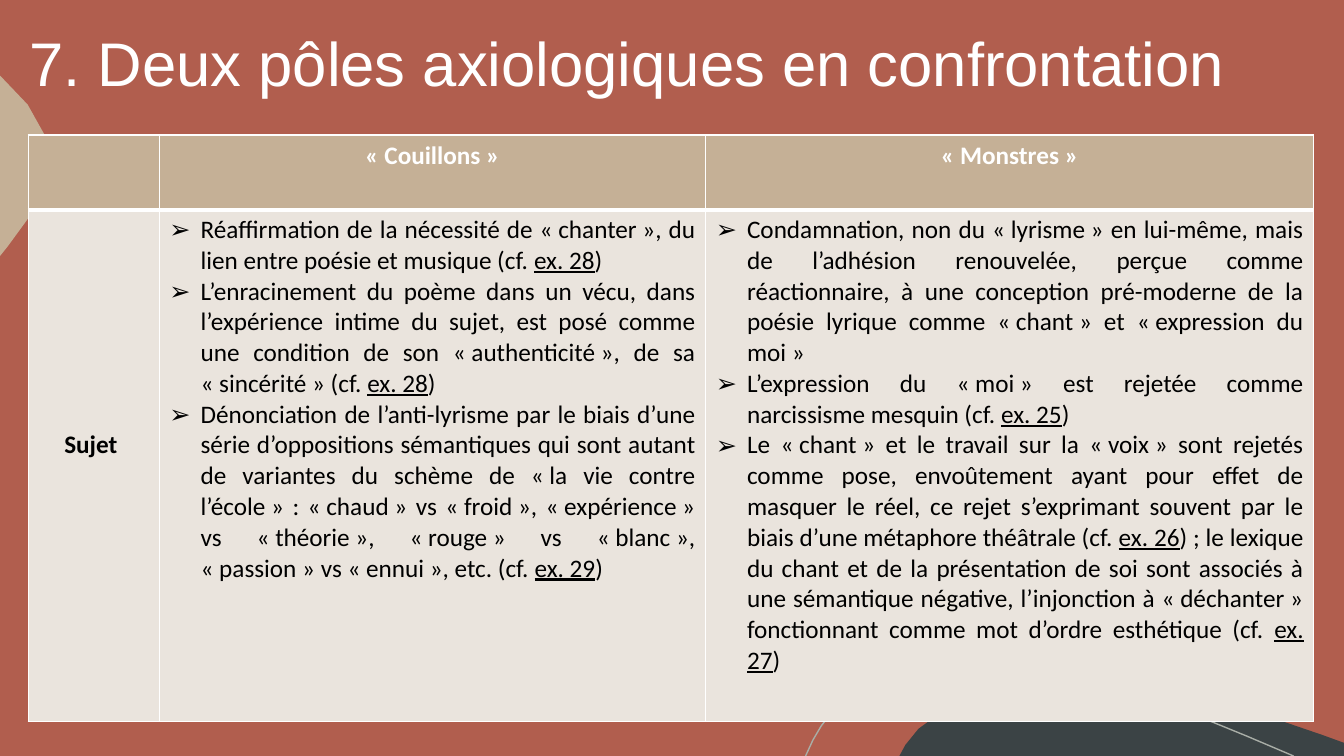
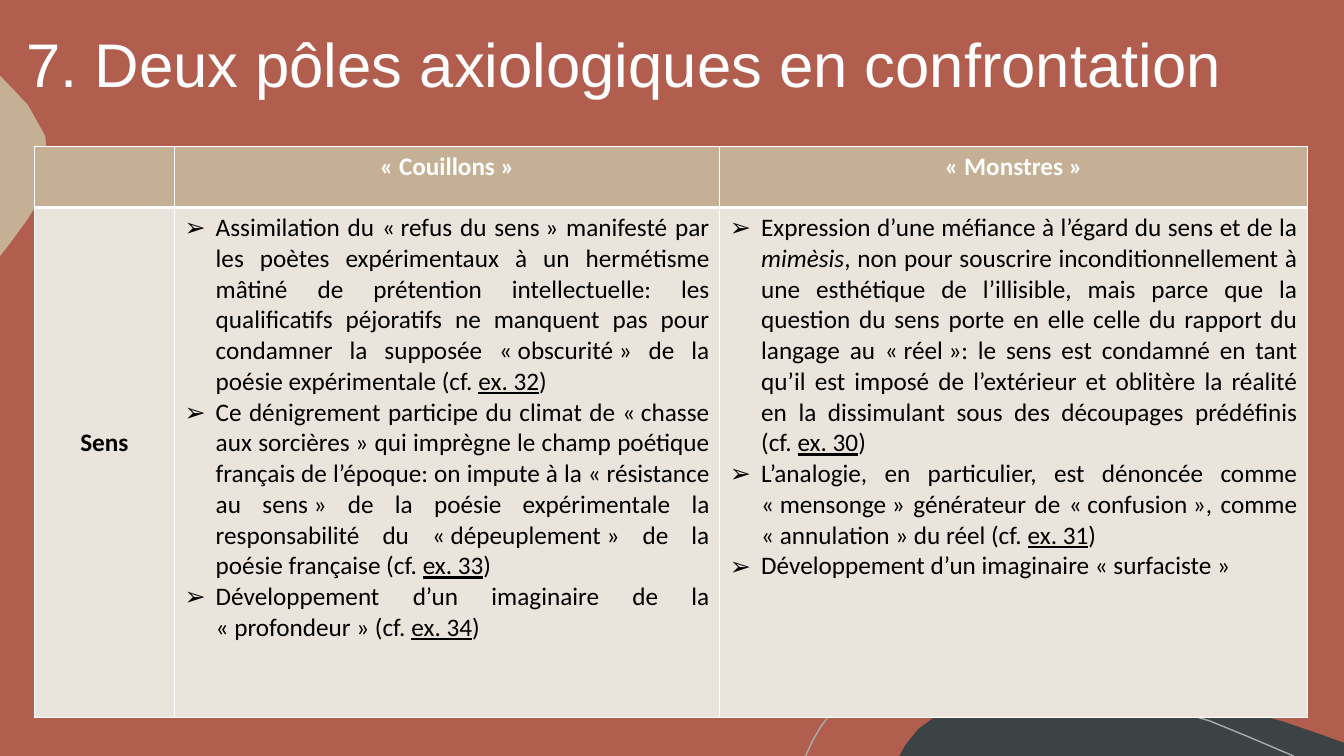
"""Build two comparison slides on the axiological poles, one table each."""
from lxml import etree
from pptx import Presentation
from pptx.dml.color import RGBColor
from pptx.enum.text import MSO_ANCHOR as Anchor, MSO_AUTO_SIZE as AutoSize, PP_ALIGN as Align
from pptx.oxml.ns import qn
from pptx.util import Inches, Pt

BRICK = RGBColor(0xB1, 0x5E, 0x4E)
SLATE = RGBColor(0x3B, 0x43, 0x45)
SAND = RGBColor(0xC5, 0xB0, 0x96)
MIST = RGBColor(0xA9, 0xAE, 0xA7)
CREAM = RGBColor(0xEA, 0xE4, 0xDD)
WHITE = RGBColor(0xFF, 0xFF, 0xFF)
BLACK = RGBColor(0, 0, 0)

NBSP = chr(160)
CURVE_STEPS = 3
TITLE = "7. Deux pôles axiologiques en confrontation"
HEADERS = ["", "« Couillons »", "« Monstres »"]

OUTLINES = [
    {"fill": SLATE, "start": (10.54, 6.83), "moves": [
        (11.28, 6.83, 12.04, 6.9, 12.73, 7.16), (13.11, 7.29),
        (13.33, 7.37), (13.33, 7.5), (8.92, 7.5), (8.98, 7.39),
        (9.11, 7.23), (9.39, 6.93, 9.82, 6.84, 10.23, 6.83)]},
    {"fill": SAND, "start": (0, 0.75), "moves": [
        (0.01, 0.76), (0.3, 1.02, 0.54, 1.33, 0.48, 1.7), (0.46, 1.87, 0.37, 2.03, 0.27, 2.18),
        (0.08, 2.44), (0, 2.54)]},
    {"fill": None, "start": (7.99, 7.5), "moves": [
        (8.06, 7.33, 8.14, 7.19, 8.24, 7.08), (8.5, 6.81, 8.89, 6.73, 9.26, 6.72),
        (9.55, 6.72), (10.22, 6.72, 11, 6.89, 11.55, 7.02),
        (12.09, 7.15, 12.26, 7.27, 12.83, 7.5)]},
]

SLIDES = [
    {
        "title_box": (0.19, 0.17, 12.96, 0.99),
        "table_at": (0.28, 1.34),
        "columns": [1.3, 5.42, 6.03],
        "rows": [0.74, 5.08],
        "topic": "Sujet ",
        "columns_text": [
            [
                "Réaffirmation de la nécessité de « chanter », du lien entre poésie et musique "
                "(cf. |ex. 28|)",
                "L’enracinement du poème dans un vécu, dans l’expérience intime du sujet, est posé "
                "comme une condition de son « authenticité », de sa « sincérité » (cf. |ex. 28|)",
                "Dénonciation de l’anti-lyrisme par le biais d’une série d’oppositions sémantiques "
                "qui sont autant de variantes du schème de « la vie contre l’école » : « chaud » vs "
                "« froid », « expérience » vs « théorie », « rouge » vs « blanc », « passion » vs "
                "« ennui », etc. (cf. |ex. 29|) ",
            ],
            [
                "Condamnation, non du « lyrisme » en lui-même, mais de l’adhésion renouvelée, "
                "perçue comme réactionnaire, à une conception pré-moderne de la poésie lyrique "
                "comme « chant » et « expression du moi »",
                "L’expression du « moi » est rejetée comme narcissisme mesquin (cf. |ex. 25|)",
                "Le « chant » et le travail sur la « voix » sont rejetés comme pose, envoûtement "
                "ayant pour effet de masquer le réel, ce rejet s’exprimant souvent par le biais "
                "d’une métaphore théâtrale (cf. |ex. 26|) ; le lexique du chant et de la "
                "présentation de soi sont associés à une sémantique négative, l’injonction à "
                "« déchanter » fonctionnant comme mot d’ordre esthétique (cf. |ex. 27|)",
            ],
        ],
    },
    {
        "title_box": (0.16, 0.16, 13, 1.03),
        "table_at": (0.34, 1.45),
        "columns": [1.39, 5.41, 5.83],
        "rows": [0.61, 5.06],
        "topic": "Sens",
        "columns_text": [
            [
                "Assimilation du « refus du sens » manifesté par les poètes expérimentaux à un "
                "hermétisme mâtiné de prétention intellectuelle: les qualificatifs péjoratifs ne "
                "manquent pas pour condamner la supposée « obscurité » de la poésie expérimentale "
                "(cf. |ex. 32|)",
                "Ce dénigrement participe du climat de « chasse aux sorcières » qui imprègne le "
                "champ poétique français de l’époque: on impute à la « résistance au sens » de la "
                "poésie expérimentale la responsabilité du « dépeuplement » de la poésie française "
                "(cf. |ex. 33|)",
                "Développement d’un imaginaire de la « profondeur » (cf. |ex. 34|)",
            ],
            [
                "Expression d’une méfiance à l’égard du sens et de la |mimèsis|, non pour souscrire "
                "inconditionnellement à une esthétique de l’illisible, mais parce que la question "
                "du sens porte en elle celle du rapport du langage au « réel »: le sens est "
                "condamné en tant qu’il est imposé de l’extérieur et oblitère la réalité en la "
                "dissimulant sous des découpages prédéfinis (cf. |ex. 30|)",
                "L’analogie, en particulier, est dénoncée comme « mensonge » générateur de "
                "« confusion », comme « annulation » du réel (cf. |ex. 31|)",
                "Développement d’un imaginaire « surfaciste »",
            ],
        ],
    },
]


def write(para, text, size=18, font="Calibri", color=BLACK, bold=False, align=Align.CENTER,
          bullet=None):
    """Fill a paragraph; parts between bars are underlined references or italic terms."""
    para.alignment = align
    if bullet:
        properties = para._p.get_or_add_pPr()
        properties.set("marL", str(Inches(0.31)))
        properties.set("indent", str(-Inches(0.31)))
        etree.SubElement(properties, qn("a:buFont")).set("typeface", "Arial")
        etree.SubElement(properties, qn("a:buChar")).set("char", bullet)
    text = text.replace("« ", "«" + NBSP).replace(" »", NBSP + "»")
    for index, part in enumerate(text.split("|")):
        span = para.add_run()
        span.text = part
        span.font.size = Pt(size)
        span.font.name = font
        span.font.color.rgb = color
        span.font.bold = bold
        if index % 2:
            if part.startswith("ex."):
                span.font.underline = True
            else:
                span.font.italic = True


def style_cell(cell, fill, **widths):
    """Give a cell its fill and white borders, one point unless a side is named."""
    properties = cell._tc.get_or_add_tcPr()
    for side in "LRTB":
        line = etree.SubElement(properties, qn(f"a:ln{side}"), w=str(Pt(widths.get(side, 1))))
        solid = etree.SubElement(line, qn("a:solidFill"))
        etree.SubElement(solid, qn("a:srgbClr"), val=str(WHITE))
    cell.fill.solid()
    cell.fill.fore_color.rgb = fill


deck = Presentation()
deck.slide_width, deck.slide_height = Inches(13.33), Inches(7.5)
layout = deck.slide_layouts[5]
layout.background.fill.solid()
layout.background.fill.fore_color.rgb = BRICK
for holder in list(layout.placeholders):
    if holder.placeholder_format.idx:
        holder.element.getparent().remove(holder.element)

pages = [deck.slides.add_slide(layout) for _ in SLIDES]

for outline in OUTLINES:
    points = [outline["start"]]
    for move in outline["moves"]:
        if len(move) == 2:
            points.append(move)
            continue
        corners = [points[-1], move[:2], move[2:4], move[4:]]
        for step in range(1, CURVE_STEPS + 1):
            t = step / CURVE_STEPS
            weights = [(1 - t) ** 3, 3 * t * (1 - t) ** 2, 3 * t ** 2 * (1 - t), t ** 3]
            points.append(tuple(sum(w * corner[axis] for w, corner in zip(weights, corners))
                                for axis in (0, 1)))
    points = [(Inches(x), Inches(y)) for x, y in points]
    builder = pages[0].shapes.build_freeform(*points[0])
    builder.add_line_segments(points[1:], close=outline["fill"] is not None)
    shape = builder.convert_to_shape()
    shape.shadow.inherit = False
    if outline["fill"] is None:
        shape.fill.background()
        shape.line.color.rgb = MIST
        shape.line.width = Pt(1)
    else:
        shape.fill.solid()
        shape.fill.fore_color.rgb = outline["fill"]
        shape.line.fill.background()
    layout.shapes.element.append(shape.element)

for page, content in zip(pages, SLIDES):
    title = page.shapes.title
    title.left, title.top, title.width, title.height = map(Inches, content["title_box"])
    frame = title.text_frame
    frame.word_wrap = True
    frame.auto_size = AutoSize.NONE
    frame.vertical_anchor = Anchor.MIDDLE
    frame.paragraphs[0].line_spacing = 0.9
    write(frame.paragraphs[0], TITLE, size=44, font="Arial", color=WHITE, align=Align.LEFT)

    left, top = content["table_at"]
    size = sum(content["columns"]), sum(content["rows"])
    table = page.shapes.add_table(2, 3, *map(Inches, (left, top, *size))).table
    for column, width in zip(table.columns, content["columns"]):
        column.width = Inches(width)
    for row, height in zip(table.rows, content["rows"]):
        row.height = Inches(height)

    for index, header in enumerate(HEADERS):
        head, body = table.cell(0, index), table.cell(1, index)
        style_cell(head, SAND, B=3)
        style_cell(body, CREAM, T=3)
        if header:
            write(head.text_frame.paragraphs[0], header, color=WHITE, bold=True)

    topic = table.cell(1, 0)
    topic.margin_top = Inches(2.18)
    write(topic.text_frame.paragraphs[0], content["topic"], bold=True)
    for index, items in enumerate(content["columns_text"], start=1):
        frame = table.cell(1, index).text_frame
        for number, item in enumerate(items):
            para = frame.add_paragraph() if number else frame.paragraphs[0]
            write(para, item, align=Align.JUSTIFY, bullet="➢")

deck.save("out.pptx")
